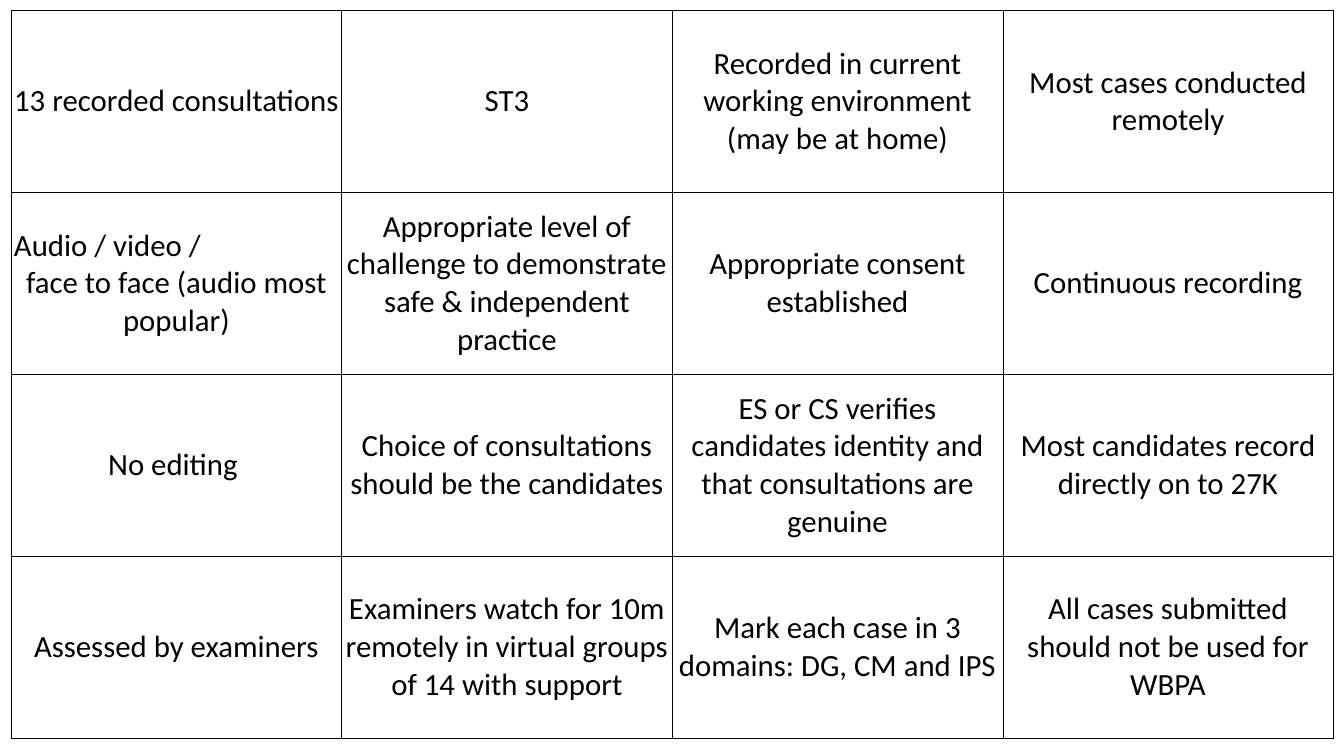
from dataclasses import dataclass

from lxml.etree import SubElement
from pptx import Presentation
from pptx.dml.color import RGBColor as Rgb
from pptx.enum.text import MSO_ANCHOR as Anchor, PP_ALIGN as Align
from pptx.oxml.ns import qn
from pptx.util import Pt


@dataclass(frozen=True)
class Theme:
    font: str = "Calibri"
    size: float = 44
    ink: str = "000000"
    rule: float = 1
    inset: float = 4
    lead: float = 1.0


# A line break in a cell starts a new paragraph.
FACTS = [
    ["13 recorded consultations", "ST3",
     "Recorded in current working environment (may be at home)",
     "Most cases conducted remotely"],
    ["Audio / video /\nface to face (audio most popular)",
     "Appropriate level of challenge to demonstrate safe & independent practice",
     "Appropriate consent established", "Continuous recording"],
    ["No editing ", "Choice of consultations should be the candidates",
     "ES or CS verifies candidates identity and that consultations are genuine",
     "Most candidates record directly on to 27K"],
    ["Assessed by examiners",
     "Examiners watch for 10m remotely in virtual groups of 14 with support",
     "Mark each case in 3 domains: DG, CM and IPS",
     "All cases submitted should not be used for WBPA"],
]


class Deck:
    def __init__(self, theme, wide, high):
        self.theme = theme
        self.prs = Presentation()
        self.prs.slide_width, self.prs.slide_height = Pt(wide), Pt(high)
        self.slide = self.prs.slides.add_slide(self.prs.slide_layouts[6])

    def table(self, data, left, top, wide, high):
        rows, cols = len(data), len(data[0])
        grid = self.slide.shapes.add_table(
            rows, cols, Pt(left), Pt(top), Pt(wide), Pt(high)).table
        grid.first_row = grid.horz_banding = False
        for col in grid.columns:
            col.width = Pt(wide / cols)
        for row, texts in zip(grid.rows, data):
            row.height = Pt(high / rows)
            for cell, text in zip(row.cells, texts):
                self.cell(cell, text)

    def cell(self, cell, text):
        gap = Pt(self.theme.inset)
        cell.margin_left = cell.margin_right = gap
        cell.margin_top = cell.margin_bottom = gap
        cell.vertical_anchor = Anchor.MIDDLE
        self.border(cell)
        cell.fill.background()
        cell.text_frame.text = text
        paras = cell.text_frame.paragraphs
        for para in paras:
            para.alignment = Align.CENTER if para is paras[-1] else Align.LEFT
            para.line_spacing = self.theme.lead
            for run in para.runs:
                run.font.name = self.theme.font
                run.font.size = Pt(self.theme.size)
                run.font.color.rgb = Rgb.from_string(self.theme.ink)

    def border(self, cell):
        props = cell._tc.get_or_add_tcPr()
        for side in ("lnL", "lnR", "lnT", "lnB"):
            line = SubElement(props, qn(f"a:{side}"), w=str(Pt(self.theme.rule)))
            fill = SubElement(line, qn("a:solidFill"))
            SubElement(fill, qn("a:srgbClr"), val=self.theme.ink)


def main():
    deck = Deck(Theme(), 1920, 1080)
    deck.table(FACTS, left=16, top=15, wide=1888.8, high=1039.2)
    deck.prs.save("out.pptx")


if __name__ == "__main__":
    main()
